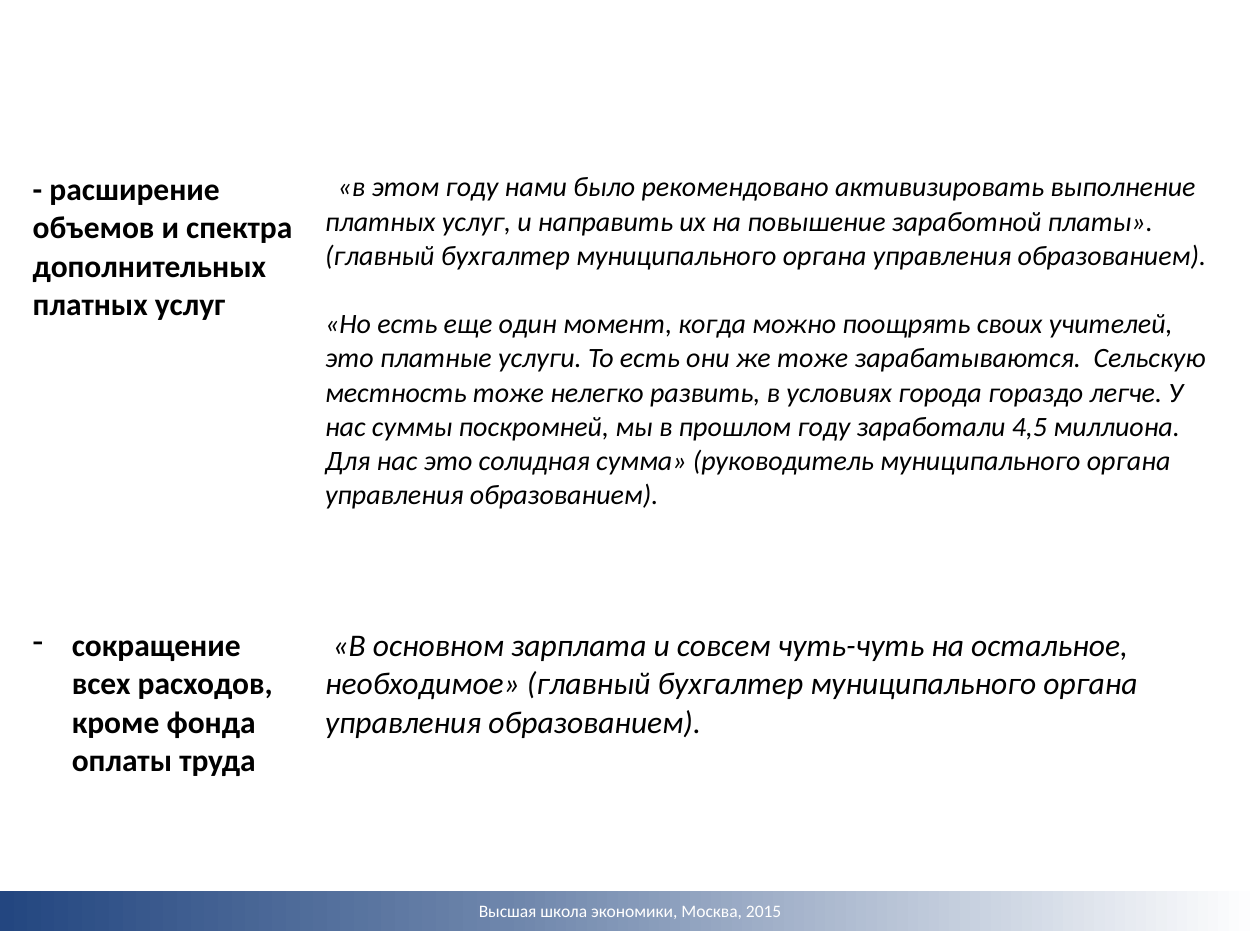
import copy
import dataclasses
import lxml.etree
import pptx
import pptx.dml.color
import pptx.enum.shapes
import pptx.enum.text
import pptx.oxml.ns
import pptx.util

SLIDE_WIDTH, SLIDE_HEIGHT = 10, 7.5
FONT = "Calibri"
BLACK, WHITE = "000000", "FFFFFF"
MEASURE = {"bold": True}
QUOTE = {"bold": False, "italic": True}


@dataclasses.dataclass(frozen=True)
class Passage:
    text: str
    size: float
    style: dict
    space_before: float = 0
    left: float = 0
    indent: float = 0
    bullet: str = ""


ROWS = [
    [
        [Passage("- расширение объемов и спектра дополнительных платных услуг", 18, MEASURE)],
        [
            Passage(
                "«в этом году нами было рекомендовано активизировать выполнение "
                "платных услуг, и направить их на повышение заработной платы». "
                "(главный бухгалтер муниципального органа управления образованием).",
                16, QUOTE, indent=0.1),
            Passage(
                "«Но есть еще один момент, когда можно поощрять своих учителей, "
                "это платные услуги. То есть они же тоже зарабатываются.  Сельскую "
                "местность тоже нелегко развить, в условиях города гораздо легче. У "
                "нас суммы поскромней, мы в прошлом году заработали 4,5 миллиона. "
                "Для нас это солидная сумма» (руководитель муниципального органа "
                "управления образованием).",
                16, QUOTE, space_before=19.5),
        ],
    ],
    [
        [Passage("сокращение всех расходов, кроме фонда оплаты труда", 18, MEASURE,
                 left=0.31, indent=-0.31, bullet="-")],
        [Passage(
            "«В основном зарплата и совсем чуть-чуть на остальное, "
            "необходимое» (главный бухгалтер муниципального органа "
            "управления образованием).",
            18, QUOTE, indent=0.06)],
    ],
]
COLUMN_WIDTHS = [2.32, 7.31]
ROW_HEIGHTS = [3.62, 2.09]
BAND_STOPS = [(0, "234680"), (0.4, "6D85AB"), (1, WHITE)]


def color(value: str) -> pptx.dml.color.RGBColor:
    return pptx.dml.color.RGBColor.from_string(value)


def inches(*lengths: float) -> list[pptx.util.Length]:
    return [pptx.util.Inches(length) for length in lengths]


def write(paragraph, passage: Passage, ink: str = BLACK) -> None:
    properties = paragraph._p.get_or_add_pPr()
    for name, length in {"marL": passage.left, "indent": passage.indent}.items():
        properties.set(name, str(pptx.util.Inches(length)))
    if passage.bullet:
        mark = lxml.etree.SubElement(properties, pptx.oxml.ns.qn("a:buChar"))
        mark.set("char", passage.bullet)
    paragraph.space_before = pptx.util.Pt(passage.space_before)
    run = paragraph.add_run()
    run.text = passage.text
    formats = {"name": FONT, "size": pptx.util.Pt(passage.size), **passage.style}
    for name, value in formats.items():
        setattr(run.font, name, value)
    run.font.color.rgb = color(ink)


def draw_footer(slide) -> None:
    band = slide.shapes.add_shape(
        pptx.enum.shapes.MSO_SHAPE.RECTANGLE, *inches(0, 7.07, SLIDE_WIDTH, 0.32))
    band.shadow.inherit = False
    band.line.fill.background()
    band.fill.gradient()
    band.fill.gradient_angle = 0
    first_stop = next(band._element.spPr.iter(pptx.oxml.ns.qn("a:gs")))
    first_stop.addnext(copy.deepcopy(first_stop))
    for stop, (position, shade) in zip(band.fill.gradient_stops, BAND_STOPS):
        stop.position = position
        stop.color.rgb = color(shade)

    credit = slide.shapes.add_textbox(*inches(0, 7.09, SLIDE_WIDTH, 0.27)).text_frame
    credit.word_wrap = True
    write(credit.paragraphs[0], Passage("Высшая школа экономики, Москва, 2015", 10, {}), WHITE)
    credit.paragraphs[0].alignment = pptx.enum.text.PP_ALIGN.CENTER


def draw_measures(slide) -> None:
    measures = slide.shapes.add_table(
        len(ROWS), len(COLUMN_WIDTHS),
        *inches(0.16, 1.3, sum(COLUMN_WIDTHS), sum(ROW_HEIGHTS))).table
    measures.horz_banding = False
    for column, width in zip(measures.columns, inches(*COLUMN_WIDTHS)):
        column.width = width
    for row, height, contents in zip(measures.rows, inches(*ROW_HEIGHTS), ROWS):
        row.height = height
        for cell, passages in zip(row.cells, contents):
            cell.fill.solid()
            cell.fill.fore_color.rgb = color(WHITE)
            for index, passage in enumerate(passages):
                frame = cell.text_frame
                write(frame.add_paragraph() if index else frame.paragraphs[0], passage)


def main() -> None:
    presentation = pptx.Presentation()
    presentation.slide_width, presentation.slide_height = inches(SLIDE_WIDTH, SLIDE_HEIGHT)
    slide = presentation.slides.add_slide(presentation.slide_layouts.get_by_name("Blank"))
    draw_footer(slide)
    draw_measures(slide)
    presentation.save("out.pptx")


if __name__ == "__main__":
    main()
